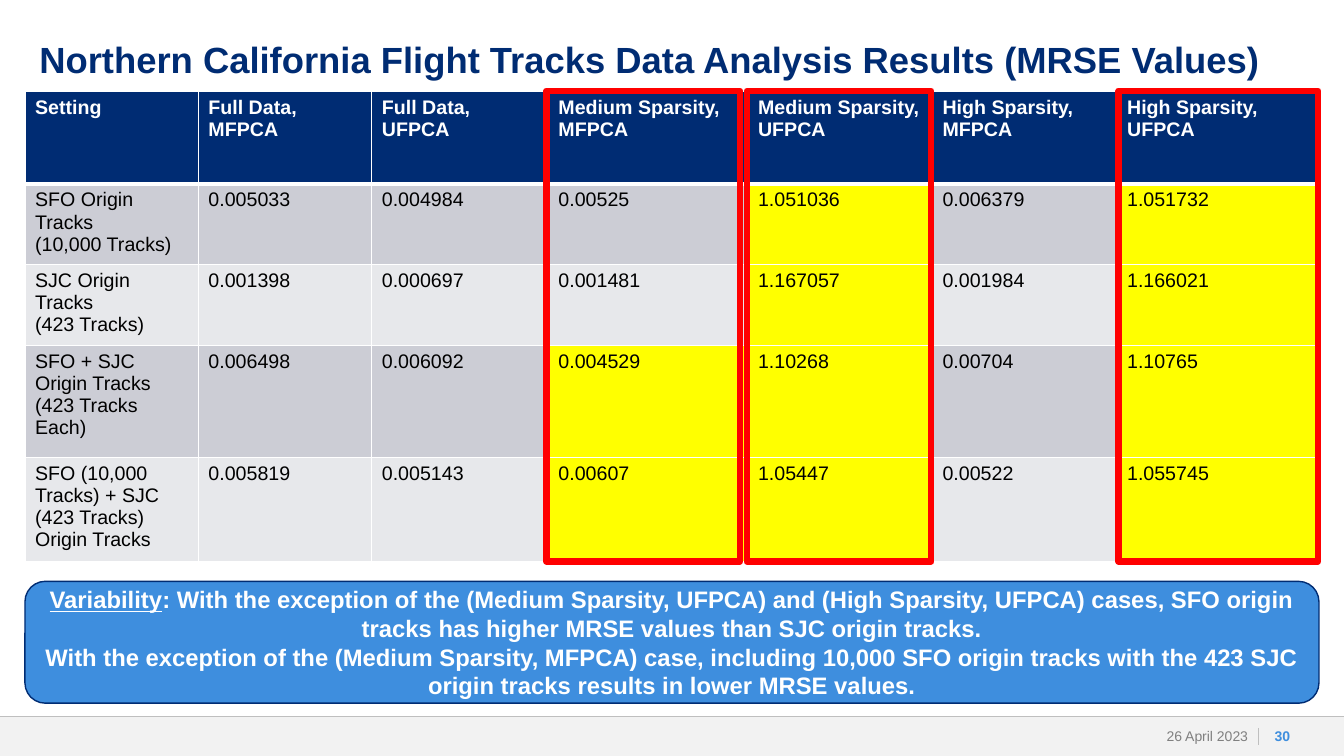
from lxml.etree import SubElement
from pptx import Presentation
from pptx.dml.color import RGBColor
from pptx.enum.shapes import MSO_CONNECTOR, MSO_SHAPE
from pptx.enum.text import MSO_ANCHOR, MSO_AUTO_SIZE, PP_ALIGN
from pptx.oxml.ns import qn
from pptx.util import Cm, Pt

NAVY, BLUE, WHITE, BLACK = "002C73", "3E8EDE", "FFFFFF", "000000"
GREY, RULE, BAND, RED, YELLOW = "808080", "BFBFBF", "F2F2F2", "FF0000", "FFFF00"
STRIPES = ["CCCDD5", "E7E8EB"]
COLUMN_WIDTHS = [4.37, 4.37, 4.45, 5.03, 4.65, 4.65, 5.08]
ROW_HEIGHTS = [2.34, 1.27, 1.27, 2.82, 1.27]
ROWS = [
    ["Setting", "Full Data,\nMFPCA", "Full Data,\nUFPCA", "Medium Sparsity,\nMFPCA",
     "Medium Sparsity,\nUFPCA", "High Sparsity,\nMFPCA", "High Sparsity,\nUFPCA"],
    ["SFO Origin Tracks\n(10,000 Tracks)", "0.005033", "0.004984", "0.00525",
     "1.051036", "0.006379", "1.051732"],
    ["SJC Origin Tracks\n(423 Tracks)", "0.001398", "0.000697", "0.001481",
     "1.167057", "0.001984", "1.166021"],
    ["SFO + SJC Origin Tracks\n(423 Tracks Each)", "0.006498", "0.006092", "0.004529",
     "1.10268", "0.00704", "1.10765"],
    ["SFO (10,000 Tracks) + SJC (423 Tracks) Origin Tracks", "0.005819", "0.005143",
     "0.00607", "1.05447", "0.00522", "1.055745"],
]
HIGHLIGHTED_ROWS = {3: [3, 4], 4: [1, 2, 3, 4], 6: [1, 2, 3, 4]}
VARIABILITY = [
    [("Variability", {"underline": True}),
     (": With the exception of the (Medium Sparsity, UFPCA) and (High Sparsity, UFPCA) cases, "
      "SFO origin tracks has higher MRSE values than SJC origin tracks.", {})],
    [("With the exception of the (Medium Sparsity, MFPCA) case, including 10,000 SFO origin "
      "tracks with the 423 SJC origin tracks results in lower MRSE values.", {})],
]


def colour(value):
    """Turn a hex string into a colour."""
    return RGBColor.from_string(value)


def apply(target, values):
    """Set each named attribute on the target."""
    for name, value in values.items():
        setattr(target, name, value)


class SlideBuilder:
    """Hold the style and the current slide."""

    def __init__(self, deck, font="Arial"):
        """Add a title-only slide to the deck."""
        self.font = font
        self.page = deck.slides.add_slide(deck.slide_layouts[5])

    def fill_text(self, frame, paragraphs, size, text_colour, bold=False,
                  para_format=None, frame_format=None):
        """Fill a text frame with paragraphs of formatted spans."""
        apply(frame, {"word_wrap": True, **(frame_format or {})})
        for index, spans in enumerate(paragraphs):
            para = frame.add_paragraph() if index else frame.paragraphs[0]
            apply(para, para_format or {})
            for text, extra in spans:
                span = para.add_run()
                span.text = text
                apply(span.font, {"name": self.font, "size": Pt(size), "bold": bold, **extra})
                span.font.color.rgb = colour(text_colour)

    def title(self, text, left, top, width, height):
        """Place and format the title placeholder."""
        box = self.page.shapes.title
        apply(box, {"left": Cm(left), "top": Cm(top), "width": Cm(width), "height": Cm(height)})
        frame_format = {"margin_left": 0, "margin_right": 0, "margin_top": 0, "margin_bottom": 0,
                        "vertical_anchor": MSO_ANCHOR.TOP, "auto_size": MSO_AUTO_SIZE.NONE}
        self.fill_text(box.text_frame, [[(text, {})]], 26, NAVY, True,
                       {"alignment": PP_ALIGN.LEFT, "line_spacing": 0.9}, frame_format)

    def shape(self, kind, left, top, width, height, fill=None, line=None, weight=1):
        """Add a preset shape with an optional fill and outline."""
        box = self.page.shapes.add_shape(kind, Cm(left), Cm(top), Cm(width), Cm(height))
        box.shadow.inherit = False
        for part, value in ((box.fill, fill), (box.line.fill, line)):
            if value:
                part.solid()
                part.fore_color.rgb = colour(value)
            else:
                part.background()
        if line:
            box.line.width = Pt(weight)
        return box

    def rule(self, x1, y1, x2, y2):
        """Add a thin straight line."""
        line = self.page.shapes.add_connector(
            MSO_CONNECTOR.STRAIGHT, Cm(x1), Cm(y1), Cm(x2), Cm(y2))
        line.line.color.rgb = colour(RULE)
        line.line.width = Pt(0.5)
        SubElement(line._element.spPr, qn("a:effectLst"))

    def label(self, text, left, top, width, height, text_colour, align, bold=False, side=0):
        """Add a small footer text."""
        box = self.page.shapes.add_textbox(Cm(left), Cm(top), Cm(width), Cm(height))
        frame_format = {"margin_left": Cm(side), "margin_right": Cm(side), "margin_top": 0,
                        "margin_bottom": 0, "vertical_anchor": MSO_ANCHOR.MIDDLE}
        self.fill_text(box.text_frame, [[(text, {})]], 10, text_colour, bold,
                       {"alignment": align}, frame_format)

    def border(self, cell, bottom):
        """Draw white borders round a cell."""
        properties = cell._tc.get_or_add_tcPr()
        for side, weight in (("L", 1), ("R", 1), ("T", 1), ("B", bottom)):
            line = SubElement(properties, qn(f"a:ln{side}"), w=str(Pt(weight)))
            fill = SubElement(line, qn("a:solidFill"))
            SubElement(fill, qn("a:srgbClr"), val=WHITE)

    def table(self, left, top):
        """Add the results table."""
        table = self.page.shapes.add_table(
            len(ROWS), len(COLUMN_WIDTHS), Cm(left), Cm(top),
            Cm(sum(COLUMN_WIDTHS)), Cm(sum(ROW_HEIGHTS))).table
        for column, width in zip(table.columns, COLUMN_WIDTHS):
            column.width = Cm(width)
        for r, (values, height) in enumerate(zip(ROWS, ROW_HEIGHTS)):
            table.rows[r].height = Cm(height)
            for c, text in enumerate(values):
                cell = table.cell(r, c)
                header = r == 0
                fill = NAVY if header else STRIPES[(r - 1) % 2]
                if r in HIGHLIGHTED_ROWS.get(c, []):
                    fill = YELLOW
                self.border(cell, 3 if header else 1)
                cell.fill.solid()
                cell.fill.fore_color.rgb = colour(fill)
                self.fill_text(cell.text_frame, [[(line, {})] for line in text.split("\n")],
                               14, WHITE if header else BLACK, header)


def main():
    """Build and save the slide."""
    deck = Presentation()
    apply(deck, {"slide_width": Cm(33.87), "slide_height": Cm(19.05)})
    slide = SlideBuilder(deck)
    slide.shape(MSO_SHAPE.RECTANGLE, 0, 18.06, 33.87, 0.99, BAND)
    slide.rule(0, 18.06, 33.87, 18.06)
    slide.rule(31.72, 18.34, 31.72, 18.77)
    slide.label("26 April 2023", 27.89, 18.06, 3.81, 0.99, GREY, PP_ALIGN.RIGHT, side=0.25)
    slide.label("30", 31.78, 18.06, 1.07, 0.99, BLUE, PP_ALIGN.CENTER, bold=True)
    slide.title("Northern California Flight Tracks Data Analysis Results (MRSE Values)",
                0.99, 1.07, 31.32, 2.11)
    slide.table(0.63, 2.3)
    for left, width in ((13.77, 4.88), (18.82, 4.65), (28.19, 5.03)):
        slide.shape(MSO_SHAPE.RECTANGLE, left, 2.29, width, 11.86, line=RED, weight=4.5)
    callout = slide.shape(MSO_SHAPE.ROUNDED_RECTANGLE, 0.63, 14.65, 32.61, 3.07, BLUE, NAVY)
    slide.fill_text(callout.text_frame, VARIABILITY, 17, WHITE, True,
                    {"alignment": PP_ALIGN.CENTER}, {"vertical_anchor": MSO_ANCHOR.MIDDLE})
    deck.save("out.pptx")


if __name__ == "__main__":
    main()
